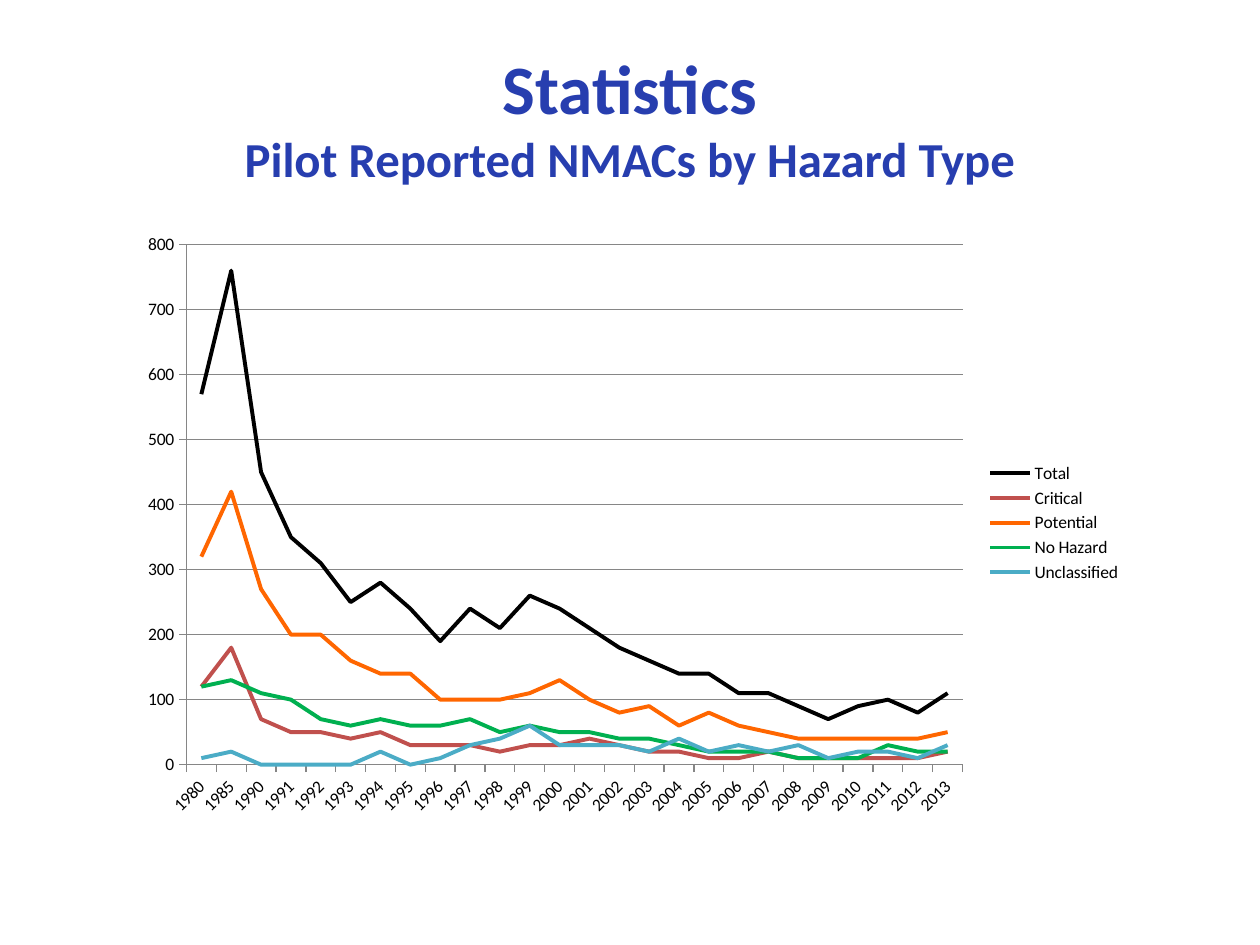
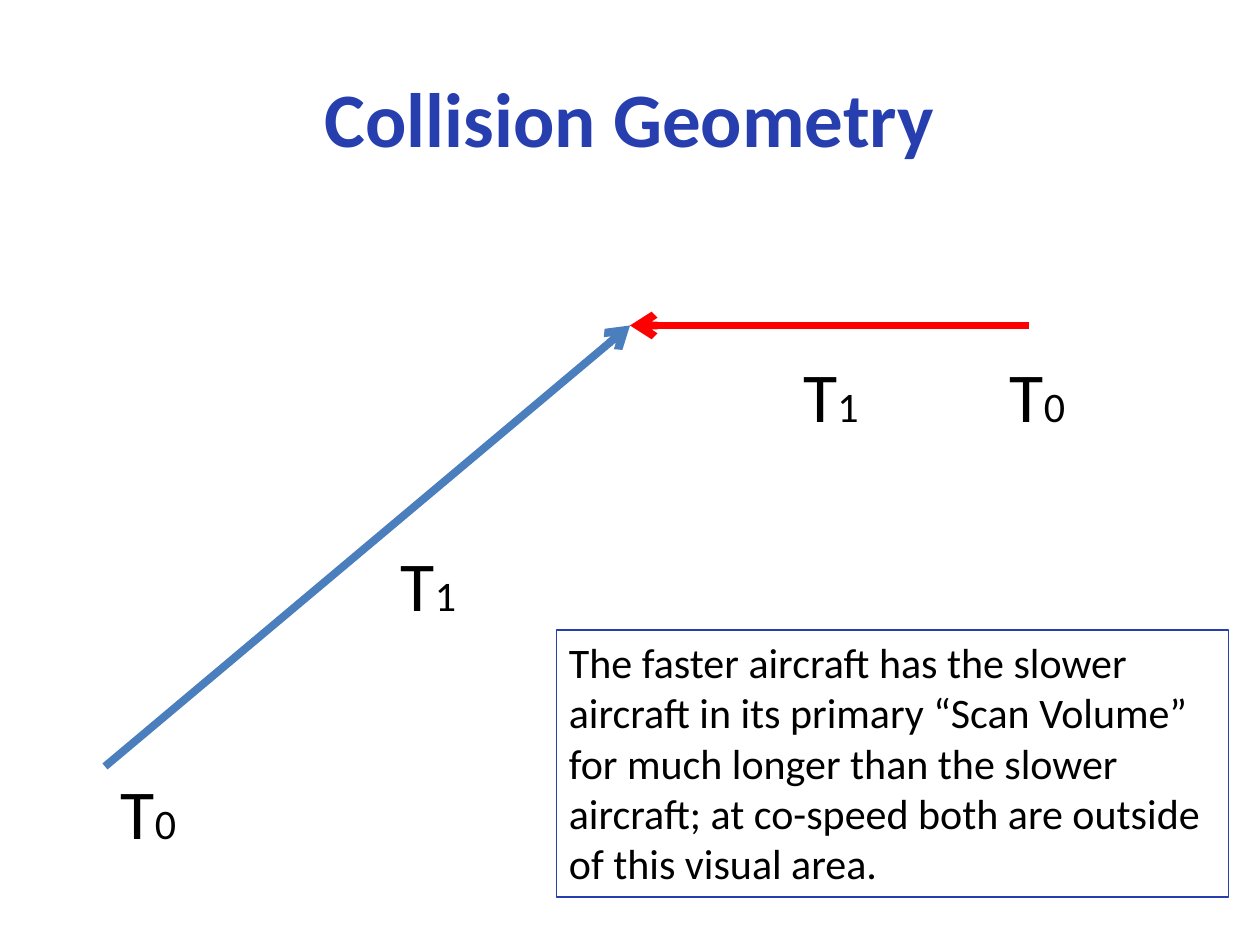
"""Build two slides on near mid-air collisions: hazard statistics and collision geometry."""
from dataclasses import dataclass

from lxml import etree
from pptx import Presentation
from pptx import util as u
from pptx.chart import data as chart_data
from pptx.dml.color import RGBColor
from pptx.enum import chart as chart_enum
from pptx.enum import shapes, text
from pptx.oxml import parse_xml
from pptx.oxml.ns import nsdecls, qn


@dataclass(frozen=True)
class Theme:
    font: str = "Calibri"
    title: str = "273EAF"
    ink: str = "000000"
    grid: str = "868686"
    fast: str = "4B7EBC"
    slow: str = "FF0000"
    title_size: float = 44
    split_title_size: float = 39.6
    subtitle_size: float = 27.9
    label_size: float = 40
    body_size: float = 24
    chart_size: float = 10


theme = Theme()


def style(font, size, color=theme.ink, bold=False):
    font.name, font.size, font.bold = theme.font, u.Pt(size), bold
    font.color.rgb = RGBColor.from_string(color)


def add_title(page, words, sizes):
    box = page.shapes.add_textbox(u.Pt(36), u.Pt(21.6), u.Pt(648), u.Pt(90))
    frame = box.text_frame
    frame.word_wrap = True
    frame.vertical_anchor = text.MSO_ANCHOR.MIDDLE
    frame.text = words
    para = frame.paragraphs[0]
    para.alignment = text.PP_ALIGN.CENTER
    for span, size in zip(para.runs, sizes):
        style(span.font, size, theme.title, bold=True)


deck = Presentation()
deck.slide_width, deck.slide_height = u.Pt(720), u.Pt(540)
blank = deck.slide_layouts[6]

page = deck.slides.add_slide(blank)
add_title(page, "Statistics\vPilot Reported NMACs by Hazard Type",
          (theme.split_title_size, theme.subtitle_size))

hazards = {
    "Total": ("000000", (570, 760, 450, 350, 310, 250, 280, 240, 190, 240, 210, 260, 240,
                         210, 180, 160, 140, 140, 110, 110, 90, 70, 90, 100, 80, 110)),
    "Critical": ("C0504D", (120, 180, 70, 50, 50, 40, 50, 30, 30, 30, 20, 30, 30,
                            40, 30, 20, 20, 10, 10, 20, 10, 10, 10, 10, 10, 20)),
    "Potential": ("FF6600", (320, 420, 270, 200, 200, 160, 140, 140, 100, 100, 100, 110, 130,
                             100, 80, 90, 60, 80, 60, 50, 40, 40, 40, 40, 40, 50)),
    "No Hazard": ("00B050", (120, 130, 110, 100, 70, 60, 70, 60, 60, 70, 50, 60, 50,
                             50, 40, 40, 30, 20, 20, 20, 10, 10, 10, 30, 20, 20)),
    "Unclassified": ("4BACC6", (10, 20, 0, 0, 0, 0, 20, 0, 10, 30, 40, 60, 30,
                                30, 30, 20, 40, 20, 30, 20, 30, 10, 20, 20, 10, 30)),
}
reports = chart_data.CategoryChartData()
reports.categories = [str(year) for year in (1980, 1985, *range(1990, 2014))]
for hazard, (color, counts) in hazards.items():
    reports.add_series(hazard, counts)
chart = page.shapes.add_chart(chart_enum.XL_CHART_TYPE.LINE, u.Pt(72), u.Pt(126),
                              u.Pt(576), u.Pt(345.6), reports).chart
style(chart.font, theme.chart_size)
chart.has_title = False
chart.has_legend = True
chart.legend.position = chart_enum.XL_LEGEND_POSITION.RIGHT
chart.legend.include_in_layout = False
chart.plots[0].vary_by_categories = False
for series, (color, counts) in zip(chart.plots[0].series, hazards.values()):
    series.smooth = False
    series.marker.style = chart_enum.XL_MARKER_STYLE.NONE
    series.format.line.width = u.Pt(2.25)
    series.format.line.color.rgb = RGBColor.from_string(color)

years, counts_axis = chart.category_axis, chart.value_axis
counts_axis.minimum_scale, counts_axis.maximum_scale = 0, 800
counts_axis.major_unit = 100
counts_axis.has_major_gridlines = True
for axis in (years, counts_axis):
    axis.major_tick_mark = chart_enum.XL_TICK_MARK.OUTSIDE
    style(axis.tick_labels.font, theme.chart_size)
for ruled in (years, counts_axis, counts_axis.major_gridlines):
    ruled.format.line.width = u.Pt(0.75)
    ruled.format.line.color.rgb = RGBColor.from_string(theme.grid)
years._element.find(qn("c:txPr")).find(qn("a:bodyPr")).set("rot", "-2700000")

plot_area = chart._chartSpace.chart.plotArea
for old_layout in plot_area.findall(qn("c:layout")):
    plot_area.remove(old_layout)
plot_area.insert(0, parse_xml(
    f'<c:layout {nsdecls("c")}><c:manualLayout><c:layoutTarget val="inner"/>'
    '<c:xMode val="edge"/><c:yMode val="edge"/><c:x val="0.06"/><c:y val="0.04"/>'
    '<c:w val="0.77"/><c:h val="0.86"/></c:manualLayout></c:layout>'))

page = deck.slides.add_slide(blank)
add_title(page, "Collision Geometry", (theme.title_size,))

impact = (360, 186)
for start, color in (((60, 438), theme.fast), ((588, 186), theme.slow)):
    track = page.shapes.add_connector(shapes.MSO_CONNECTOR.STRAIGHT,
                                      *(u.Pt(n) for n in (*start, *impact)))
    track.line.width = u.Pt(4.5)
    track.line.color.rgb = RGBColor.from_string(color)
    etree.SubElement(track.line._get_or_add_ln(), qn("a:tailEnd"), type="arrow")
    etree.SubElement(track._element.spPr, qn("a:effectLst"))

for moment, left, top in (("0", 62, 436), ("0", 570, 198), ("1", 222, 306), ("1", 452, 198)):
    box = page.shapes.add_textbox(u.Pt(left), u.Pt(top), u.Pt(47), u.Pt(55.4))
    box.text_frame.word_wrap = False
    para = box.text_frame.paragraphs[0]
    for words, size in (("T", theme.label_size), (moment, theme.body_size)):
        span = para.add_run()
        span.text = words
        style(span.font, size)

note = page.shapes.add_shape(shapes.MSO_SHAPE.RECTANGLE, u.Pt(318), u.Pt(360),
                             u.Pt(384), u.Pt(152.6))
note.shadow.inherit = False
note.fill.background()
note.line.width = u.Pt(0.75)
note.line.color.rgb = RGBColor.from_string(theme.title)
frame = note.text_frame
frame.word_wrap = True
frame.vertical_anchor = text.MSO_ANCHOR.TOP
frame.text = ("The faster aircraft has the slower aircraft in its primary “Scan Volume” "
              "for much longer than the slower aircraft; at co-speed both are outside "
              "of this visual area.")
frame.paragraphs[0].alignment = text.PP_ALIGN.LEFT
style(frame.paragraphs[0].runs[0].font, theme.body_size)

deck.save("out.pptx")
